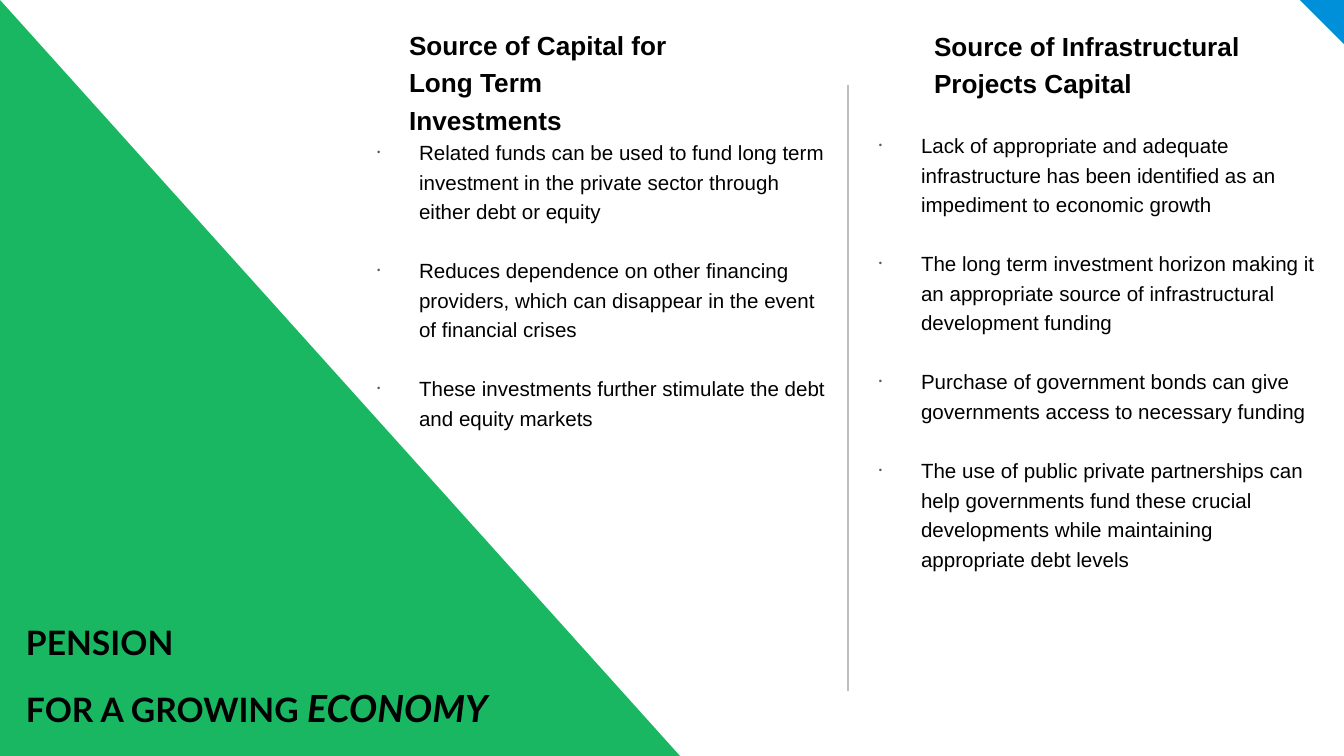
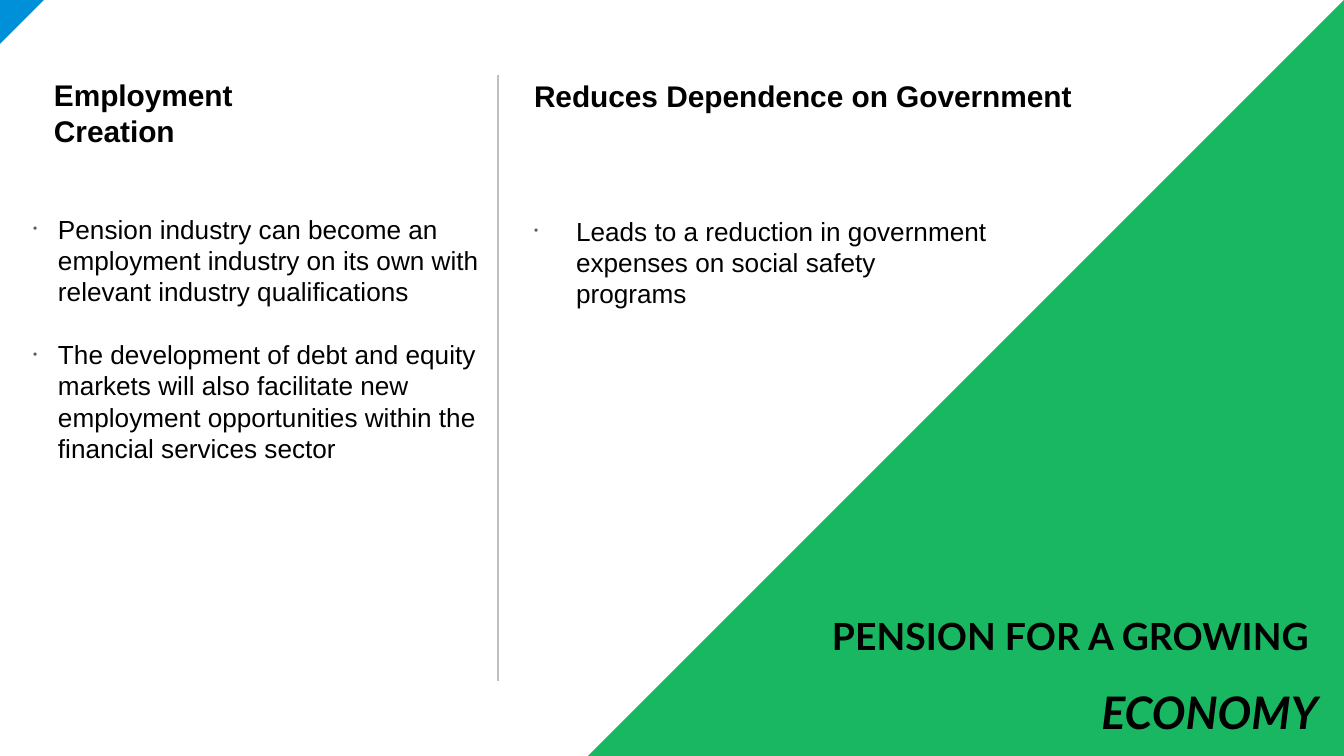
"""Build two slides on what pensions do for a growing economy."""
from lxml.etree import SubElement
from pptx import Presentation
from pptx.dml.color import RGBColor
from pptx.enum.shapes import MSO_CONNECTOR, MSO_SHAPE
from pptx.enum.text import MSO_ANCHOR, MSO_AUTO_SIZE, PP_ALIGN
from pptx.oxml.ns import qn
from pptx.util import Emu, Pt

GREEN = RGBColor(0x00, 0xB0, 0x50)
BLUE = RGBColor(0x00, 0x90, 0xDA)
GREY = RGBColor(0xBF, 0xBF, 0xBF)
BULLET_GREY = RGBColor(0x59, 0x59, 0x59)
BLACK = RGBColor(0x00, 0x00, 0x00)
WIDTH, HEIGHT, CORNER = 1344, 756, 44
COMPARISON_LAYOUT = 4
WIDE_INSETS = (13, 7)
TIGHT_INSETS = (7, 4)


def px(length):
    return Emu(round(length * 914400 / 134.4))


class Deck:
    """Hold the shared style and the slide being filled."""

    def __init__(self):
        self.presentation = Presentation()
        self.presentation.slide_width = px(WIDTH)
        self.presentation.slide_height = px(HEIGHT)
        self.slide = None

    def start_slide(self):
        layout = self.presentation.slide_layouts[COMPARISON_LAYOUT]
        self.slide = self.presentation.slides.add_slide(layout)
        for placeholder in list(self.slide.placeholders):
            if placeholder.placeholder_format.idx > 4:
                placeholder.element.getparent().remove(placeholder.element)

    def triangle(self, box, color, flips=(), opacity=100):
        corner = self.slide.shapes.add_shape(MSO_SHAPE.RIGHT_TRIANGLE, *map(px, box))
        corner.shadow.inherit = False
        corner.fill.solid()
        corner.fill.fore_color.rgb = color
        corner.line.fill.background()
        for flip in flips:
            corner.element.spPr.find(qn("a:xfrm")).set(flip, "1")
        if opacity < 100:
            tint = corner.element.spPr.find(".//" + qn("a:srgbClr"))
            SubElement(tint, qn("a:alpha"), val=str(opacity * 1000))
        corner.element.getparent().insert(2, corner.element)

    def divider(self, start, end):
        rule = self.slide.shapes.add_connector(MSO_CONNECTOR.STRAIGHT, *map(px, start + end))
        rule.line.color.rgb = GREY
        rule.line.width = Pt(1.5)
        SubElement(rule.element.spPr, qn("a:effectLst"))

    def frame(self, idx, box, insets):
        holder = self.slide.placeholders[idx]
        holder.left, holder.top, holder.width, holder.height = map(px, box)
        frame = holder.text_frame
        frame.word_wrap = True
        frame.auto_size = MSO_AUTO_SIZE.NONE
        frame.vertical_anchor = MSO_ANCHOR.TOP
        frame.margin_left = frame.margin_right = px(insets[0])
        frame.margin_top = frame.margin_bottom = px(insets[1])
        return frame

    def format_paragraph(self, paragraph, spacing, align=PP_ALIGN.LEFT, before=0):
        paragraph.alignment = align
        paragraph.line_spacing = spacing
        paragraph.space_before = Pt(before)
        paragraph.space_after = Pt(0)

    def format_run(self, run, size, font="Arial", bold=False, italic=False):
        run.font.name = font
        run.font.size = Pt(size)
        run.font.bold = bold
        run.font.italic = italic
        run.font.color.rgb = BLACK

    def title(self, lines, box, align=PP_ALIGN.LEFT):
        frame = self.frame(0, box, TIGHT_INSETS)
        frame.text = "\n".join("" for _ in lines)
        for paragraph, parts in zip(frame.paragraphs, lines):
            self.format_paragraph(paragraph, 1.5, align)
            for text, size, italic in parts:
                run = paragraph.add_run()
                run.text = text
                self.format_run(run, size, "Lato", True, italic)

    def heading(self, idx, text, box, size, spacing=1.0, insets=WIDE_INSETS):
        frame = self.frame(idx, box, insets)
        frame.text = text
        for paragraph in frame.paragraphs:
            self.format_paragraph(paragraph, spacing)
            self.format_run(paragraph.runs[0], size, bold=True)

    def bullets(self, idx, items, box, size, margin, hang, spacing=1.0, gap=0):
        frame = self.frame(idx, box, WIDE_INSETS)
        frame.text = "\n".join(items)
        for position, paragraph in enumerate(frame.paragraphs):
            self.format_paragraph(paragraph, spacing, before=gap if position else 0)
            properties = paragraph._p.get_or_add_pPr()
            properties.set("marL", str(px(margin)))
            properties.set("indent", str(px(-hang)))
            bullet_color = SubElement(properties, qn("a:buClr"))
            SubElement(bullet_color, qn("a:srgbClr"), val=str(BULLET_GREY))
            SubElement(properties, qn("a:buSzPct"), val="45000")
            SubElement(properties, qn("a:buChar"), char="•")
            self.format_run(paragraph.runs[0], size)


def capital_slide(deck):
    deck.start_slide()
    deck.triangle((0, 0, 680, HEIGHT), GREEN, opacity=90)
    deck.triangle((WIDTH - CORNER, 0, CORNER, CORNER), BLUE, ("flipH", "flipV"))
    deck.title(
        [[("PENSION", 18, False)], [("FOR A GROWING ", 18, False), ("ECONOMY", 20, True)]],
        (19, 598, 499, 134))
    deck.heading(1, "Source of Capital for\nLong Term Investments", (396, 16, 318, 89), 14, 1.2)
    deck.bullets(2, [
        "Related funds can be used to fund long term investment in the private sector "
        "through either debt or equity",
        "Reduces dependence on other financing providers, which can disappear in the event "
        "of financial crises",
        "These investments further stimulate the debt and equity markets",
    ], (313, 128, 535, 309), 11, 93, 42, 1.2, 15.8)
    deck.heading(3, "Source of Infrastructural\nProjects Capital", (921, 17, 340, 89), 14, 1.2)
    deck.bullets(4, [
        "Lack of appropriate and adequate infrastructure has been identified as an impediment "
        "to economic growth",
        "The long term investment horizon making it an appropriate source of infrastructural "
        "development funding",
        "Purchase of government bonds can give governments access to necessary funding",
        "The use of public private partnerships can help governments fund these crucial "
        "developments while maintaining appropriate debt levels",
    ], (866, 121, 465, 456), 11, 42, 42, 1.2, 15.8)
    deck.divider((848, 85), (848, 691))


def employment_slide(deck):
    deck.start_slide()
    deck.triangle((WIDTH - HEIGHT, 0, HEIGHT, HEIGHT), GREEN, ("flipH",), 90)
    deck.triangle((0, 0, CORNER, CORNER), BLUE, ("flipV",))
    deck.title(
        [[("PENSION FOR A GROWING ", 20, False)], [("ECONOMY", 24, True)]],
        (808, 587, 517, 155), PP_ALIGN.RIGHT)
    deck.heading(1, "Employment Creation", (47, 73, 318, 43), 16, insets=TIGHT_INSETS)
    deck.bullets(2, [
        "Pension industry can become an employment industry on its own with relevant "
        "industry qualifications",
        "The development of debt and equity markets will also facilitate new employment "
        "opportunities within the financial services sector",
    ], (20, 206, 527, 296), 14, 25, 25, gap=16.8)
    deck.heading(3, "Reduces Dependence on Government", (521, 71, 672, 48), 16)
    deck.bullets(4, [
        "Leads to a reduction in government expenses on social safety programs",
    ], (521, 208, 481, 108), 14, 42, 42)
    deck.divider((498, 75), (498, 681))


def main():
    deck = Deck()
    capital_slide(deck)
    employment_slide(deck)
    deck.presentation.save("out.pptx")


if __name__ == "__main__":
    main()
